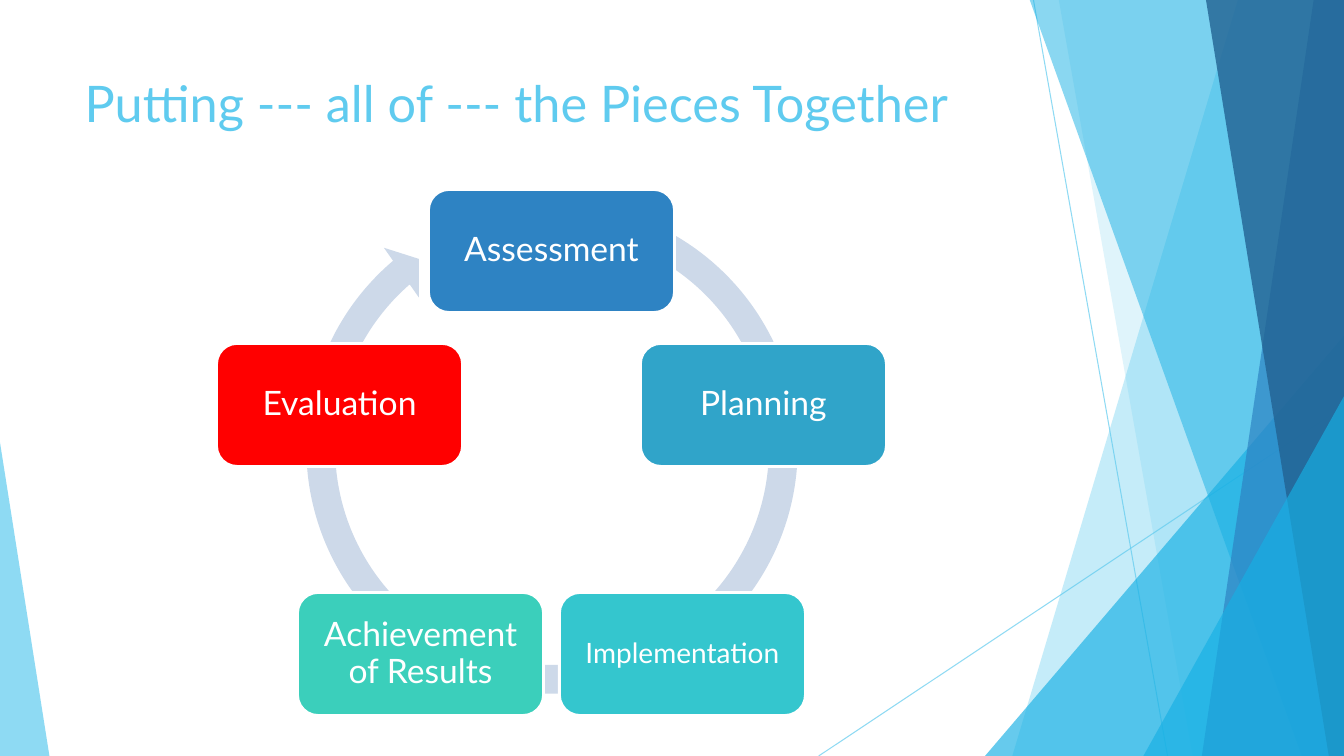
"""Build a slide with a five-step cycle beside a faceted border."""
from dataclasses import dataclass
from math import cos, pi, sin

from lxml import etree
from pptx import Presentation
from pptx.dml.color import RGBColor
from pptx.enum.shapes import MSO_CONNECTOR, MSO_SHAPE
from pptx.enum.text import MSO_ANCHOR, MSO_AUTO_SIZE, PP_ALIGN
from pptx.oxml.ns import qn
from pptx.util import Inches, Pt

LINE = MSO_CONNECTOR.STRAIGHT
WEDGE = MSO_SHAPE.ISOSCELES_TRIANGLE
ROUND = MSO_SHAPE.ROUNDED_RECTANGLE
CYCLE = MSO_SHAPE.CIRCULAR_ARROW
TOP, MIDDLE = MSO_ANCHOR.TOP, MSO_ANCHOR.MIDDLE
LEFT, CENTER = PP_ALIGN.LEFT, PP_ALIGN.CENTER
FIXED = MSO_AUTO_SIZE.NONE
WIDE, HIGH = 13.33, 7.5


@dataclass(frozen=True)
class Theme:
    """Hold the colours, font and type sizes."""
    font: str = "Lato"
    sky: str = "5FCBEF"
    aqua: str = "17B0E4"
    blue: str = "2E83C3"
    navy: str = "226292"
    ring: str = "CDD9E9"
    white: str = "FFFFFF"
    plan: str = "30A4C9"
    work: str = "34C6CE"
    goal: str = "3BCFBB"
    check: str = "FF0000"
    title: int = 36
    label: int = 24
    small: int = 20


THEME = Theme()


def paint(fill, color, alpha=100):
    """Set a solid colour and its opacity in percent."""
    fill.solid()
    fill.fore_color.rgb = RGBColor.from_string(color)
    if alpha < 100:
        node = fill._xPr.find(".//" + qn("a:srgbClr"))
        etree.SubElement(node, qn("a:alpha"), val=str(alpha * 1000))


def style(part, size, color, align):
    """Format one paragraph."""
    part.alignment = align
    part.font.name = THEME.font
    part.font.size = Pt(size)
    part.font.color.rgb = RGBColor.from_string(color)


def finish(shape, color, alpha=100):
    """Fill a shape and remove its line and shadow."""
    shape.shadow.inherit = False
    paint(shape.fill, color, alpha)
    shape.line.fill.background()


def ray(slide, start, end):
    """Draw a thin line."""
    line = slide.shapes.add_connector(LINE, *map(Inches, start + end))
    line.line.width = Pt(0.75)
    paint(line.line.fill, THEME.sky, 70)
    etree.SubElement(line._element.spPr, qn("a:effectLst"))


def band(slide, top, foot, color, alpha):
    """Draw a full-height band that ends at the right edge."""
    points = [(top, -0.01), (WIDE, -0.01), (WIDE, HIGH), (foot, HIGH)]
    spots = [(Inches(x), Inches(y)) for x, y in points]
    path = slide.shapes.build_freeform(*spots[0])
    path.add_line_segments(spots[1:], close=True)
    finish(path.convert_to_shape(), color, alpha)


def wedge(slide, left, top, width, peak, color, alpha):
    """Draw a triangle that stands on the bottom edge."""
    box = map(Inches, (left, top, width, HIGH - top))
    shape = slide.shapes.add_shape(WEDGE, *box)
    shape.adjustments[0] = peak
    finish(shape, color, alpha)


def border(slide):
    """Draw the faceted border from back to front."""
    ray(slide, (10.25, 0), (11.58, HIGH))
    ray(slide, (WIDE, 4.03), (8.12, HIGH))
    band(slide, 12.28, 10.04, THEME.sky, 36)
    band(slide, 10.5, 11.83, THEME.sky, 20)
    wedge(slide, 9.77, 3.33, 3.56, 1, THEME.aqua, 66)
    band(slide, 10.21, 12.91, THEME.aqua, 50)
    band(slide, 13.03, 11.92, THEME.blue, 70)
    band(slide, 11.96, 13.18, THEME.navy, 80)
    wedge(slide, 11.34, 3.93, 1.99, 1, THEME.aqua, 66)
    wedge(slide, 0, 4.39, 0.49, 0, THEME.sky, 70)


def heading(slide, text):
    """Place and format the title."""
    title = slide.shapes.title
    title.left, title.top = Inches(0.74), Inches(0.67)
    title.width, title.height = Inches(9.4), Inches(1.44)
    frame = title.text_frame
    frame.text = text
    frame.auto_size = FIXED
    frame.vertical_anchor = TOP
    style(frame.paragraphs[0], THEME.title, THEME.sky, LEFT)


def ring(slide):
    """Draw the round arrow behind the cards."""
    box = map(Inches, (2.88, 1.85, 5.19, 5.19))
    arrow = slide.shapes.add_shape(CYCLE, *box)
    for i, value in enumerate((0.055, 3.307, 137.618, 173.946, 0.058)):
        arrow.adjustments[i] = value
    finish(arrow, THEME.ring)


def card(slide, x, y, text, color, size):
    """Draw a labelled card around a centre point."""
    wide, high = 2.44, 1.22
    box = map(Inches, (x - wide / 2, y - high / 2, wide, high))
    shape = slide.shapes.add_shape(ROUND, *box)
    finish(shape, color)
    paint(shape.line.fill, THEME.white)
    shape.line.width = Pt(2)
    frame = shape.text_frame
    frame.word_wrap = True
    frame.vertical_anchor = MIDDLE
    pad = Inches(size / 240)
    frame.margin_left = frame.margin_right = pad
    frame.margin_top = frame.margin_bottom = pad
    frame.text = text
    part = frame.paragraphs[0]
    part.line_spacing = 0.9
    style(part, size, THEME.white, CENTER)


def cycle(slide):
    """Place the steps evenly around a circle."""
    steps = [
        ("Assessment", THEME.blue, THEME.label),
        ("Planning", THEME.plan, THEME.label),
        ("Implementation", THEME.work, THEME.small),
        ("Achievement of Results", THEME.goal, THEME.label),
        ("Evaluation", THEME.check, THEME.label),
    ]
    mid, axis, reach = 5.47, 4.7, 2.21
    ring(slide)
    for i, step in enumerate(steps):
        turn = 2 * pi * i / len(steps)
        card(slide, mid + reach * sin(turn), axis - reach * cos(turn), *step)


def main():
    """Build and save the slide."""
    deck = Presentation()
    deck.slide_width, deck.slide_height = Inches(WIDE), Inches(HIGH)
    slide = deck.slides.add_slide(deck.slide_layouts[5])
    paint(slide.background.fill, THEME.white)
    border(slide)
    heading(slide, "Putting --- all of --- the Pieces Together")
    cycle(slide)
    deck.save("out.pptx")


if __name__ == "__main__":
    main()
